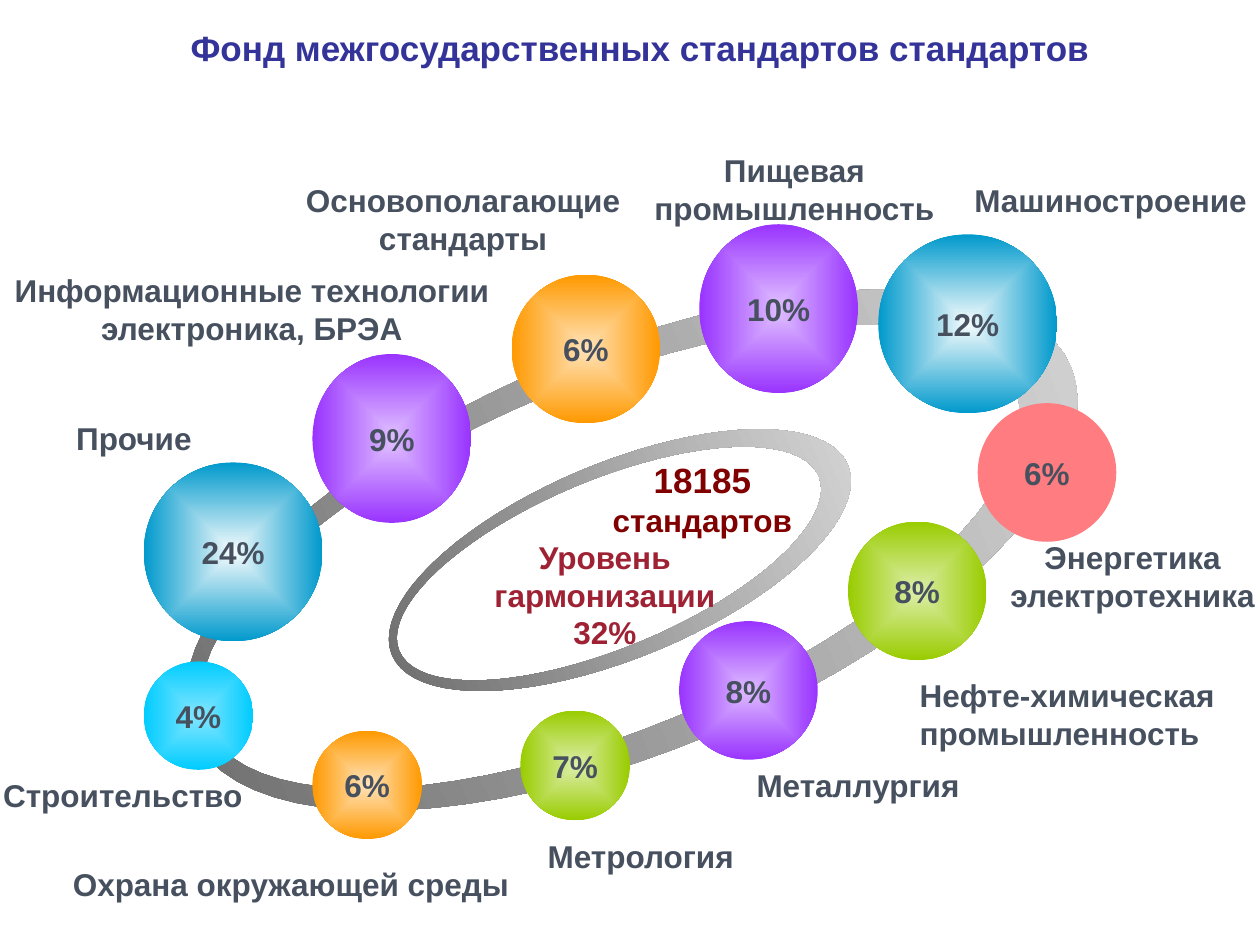
from dataclasses import dataclass
from math import cos, pi, sin
from typing import NamedTuple

from lxml.etree import SubElement
from pptx import Presentation
from pptx.dml.color import RGBColor
from pptx.enum.shapes import MSO_SHAPE
from pptx.enum.text import MSO_ANCHOR, MSO_AUTO_SIZE, PP_ALIGN
from pptx.oxml.ns import qn
from pptx.util import Inches, Pt


class Gradient(NamedTuple):
    start: str
    end: str


@dataclass(frozen=True)
class Theme:
    font: str = "Arial"
    large: int = 20
    normal: int = 18
    title: str = "333399"
    text: str = "46505E"
    total: str = "800000"
    level: str = "9E2234"
    coral: str = "FF7C80"
    ring: Gradient = Gradient("656565", "DDDDDD")
    green: Gradient = Gradient("DDEEAA", "99CC00")
    violet: Gradient = Gradient("DDBBFF", "9933FF")
    orange: Gradient = Gradient("FFE3B9", "FF9900")
    cyan: Gradient = Gradient("83E6FF", "00CCFF")
    blue: Gradient = Gradient("F7FCFD", "0099CC")


THEME = Theme()


class Box(NamedTuple):
    left: float
    top: float
    width: float
    height: float

    def lengths(self):
        return [Inches(value) for value in self]


class Span(NamedTuple):
    text: str
    size: int = THEME.normal
    color: str = THEME.text


@dataclass(frozen=True)
class Bubble:
    share: str
    box: Box
    fill: Gradient | str


@dataclass(frozen=True)
class Label:
    """Text of paragraphs, each a list of lines parted by line breaks."""
    paragraphs: list[list[Span]]
    box: Box
    align: PP_ALIGN | None = PP_ALIGN.CENTER
    wrap: bool = False


RINGS = [Box(1.23, 2.77, 7.56, 3.19), Box(2.96, 3.67, 3.92, 1.55)]
RING_TILT = -22.6
RING_STEPS = 80

BUBBLES = [
    Bubble("8%", Box(6.73, 4.14, 1.1, 1.1), THEME.green),
    Bubble("8%", Box(5.39, 4.93, 1.1, 1.1), THEME.violet),
    Bubble("6%", Box(2.48, 5.8, 0.87, 0.86), THEME.orange),
    Bubble("4%", Box(1.14, 5.25, 0.87, 0.86), THEME.cyan),
    Bubble("6%", Box(4.06, 2.18, 1.18, 1.18), THEME.orange),
    Bubble("9%", Box(2.48, 2.81, 1.26, 1.34), THEME.violet),
    Bubble("24%", Box(1.14, 3.67, 1.42, 1.42), THEME.blue),
    Bubble("7%", Box(4.13, 5.64, 0.87, 0.87), THEME.green),
    Bubble("6%", Box(7.76, 3.2, 1.1, 1.1), THEME.coral),
    Bubble("10%", Box(5.55, 1.78, 1.26, 1.34), THEME.violet),
    Bubble("12%", Box(6.97, 1.86, 1.42, 1.42), THEME.blue),
]

LABELS = [
    Label([[Span("Нефте-химическая"), Span("промышленность")]],
          Box(7.2, 5.32, 2.55, 0.7), align=None),
    Label([[Span("Металлургия")]], Box(5.9, 6.03, 1.82, 0.4)),
    Label([[Span("Прочие")]], Box(0.49, 3.28, 1.13, 0.4), PP_ALIGN.RIGHT),
    Label([[Span("Строительство")]], Box(-0.08, 6.11, 2.11, 0.4)),
    Label([[Span("Метрология")]], Box(4.24, 6.59, 1.69, 0.4)),
    Label([[Span("Машиностроение")]], Box(7.63, 1.39, 2.37, 0.4)),
    Label([[Span("Основополагающие"), Span("стандарты")]],
          Box(2.32, 1.39, 2.71, 0.7)),
    Label([[Span("Пищевая")], [Span("промышленность")]],
          Box(4.69, 1.15, 3.23, 0.71), wrap=True),
    Label([[Span("18185", THEME.large, THEME.total),
            Span("стандартов", color=THEME.total)]],
          Box(4.76, 3.59, 1.63, 0.73)),
    Label([[Span("Уровень гармонизации 32%", color=THEME.level)]],
          Box(3.74, 4.22, 2.12, 1), wrap=True),
    Label([[Span("Энергетика")], [Span("электротехника")]],
          Box(7.91, 4.22, 2.16, 0.7)),
    Label([[Span("Охрана окружающей среды")]], Box(0.48, 6.82, 3.66, 0.4)),
    Label([[Span("Информационные технологии")], [Span("электроника, БРЭА")]],
          Box(0, 2.1, 4, 0.7)),
]


def write(frame, paragraphs: list[list[Span]], align: PP_ALIGN | None) -> None:
    for number, lines in enumerate(paragraphs):
        paragraph = frame.add_paragraph() if number else frame.paragraphs[0]
        paragraph.alignment = align
        for position, span in enumerate(lines):
            if position:
                paragraph.add_line_break()
            run = paragraph.add_run()
            run.text = span.text
            run.font.name = THEME.font
            run.font.size = Pt(span.size)
            run.font.bold = True
            run.font.color.rgb = RGBColor.from_string(span.color)


def paint(shape, fill: Gradient | str, from_centre: bool = False) -> None:
    shape.shadow.inherit = False
    shape.line.fill.background()
    if isinstance(fill, str):
        shape.fill.solid()
        shape.fill.fore_color.rgb = RGBColor.from_string(fill)
        return
    shape.fill.gradient()
    shape.fill.gradient_angle = 0
    for stop, color in zip(shape.fill.gradient_stops, fill):
        stop.color.rgb = RGBColor.from_string(color)
    if from_centre:
        gradient = shape._element.spPr.find(qn("a:gradFill"))
        gradient.remove(gradient.find(qn("a:lin")))
        path = SubElement(gradient, qn("a:path"), path="shape")
        SubElement(path, qn("a:fillToRect"),
                   {side: "50000" for side in "ltrb"})


def ellipse_points(x: float, y: float, rx: float, ry: float, direction: int):
    angles = (direction * 2 * pi * step / RING_STEPS for step in range(RING_STEPS))
    return [(Inches(x + rx * cos(a)), Inches(y + ry * sin(a))) for a in angles]


def draw_ring(shapes, box: Box) -> None:
    """Draw a tilted ellipse whose hole sits off centre, so the right is thicker."""
    rx, ry = box.width / 2, box.height / 2
    x, y = box.left + rx, box.top + ry
    outer = ellipse_points(x, y, rx, ry, -1)
    hole = ellipse_points(x - 0.046 * rx, y - 0.01 * ry, 0.92 * rx, 0.862 * ry, 1)
    builder = shapes.build_freeform(*outer[0])
    builder.add_line_segments(outer[1:])
    builder.move_to(*hole[0])
    builder.add_line_segments(hole[1:])
    ring = builder.convert_to_shape()
    ring.rotation = RING_TILT
    paint(ring, THEME.ring)


def draw_bubble(shapes, bubble: Bubble) -> None:
    circle = shapes.add_shape(MSO_SHAPE.OVAL, *bubble.box.lengths())
    paint(circle, bubble.fill, from_centre=True)
    frame = circle.text_frame
    frame.word_wrap = False
    frame.vertical_anchor = MSO_ANCHOR.MIDDLE
    write(frame, [[Span(bubble.share)]], PP_ALIGN.CENTER)


def draw_label(shapes, label: Label) -> None:
    frame = shapes.add_textbox(*label.box.lengths()).text_frame
    frame.word_wrap = label.wrap
    frame.auto_size = MSO_AUTO_SIZE.SHAPE_TO_FIT_TEXT
    write(frame, label.paragraphs, label.align)


def draw_title(title) -> None:
    title.left, title.top, title.width, title.height = Box(0.83, 0, 8.5, 0.76).lengths()
    title.text_frame.vertical_anchor = MSO_ANCHOR.MIDDLE
    heading = Span("Фонд межгосударственных стандартов стандартов",
                   THEME.large, THEME.title)
    write(title.text_frame, [[heading]], PP_ALIGN.CENTER)


def main() -> None:
    deck = Presentation()
    deck.slide_width, deck.slide_height = Inches(10), Inches(7.5)
    shapes = deck.slides.add_slide(deck.slide_layouts.get_by_name("Title Only")).shapes
    draw_title(shapes.title)
    for ring in RINGS:
        draw_ring(shapes, ring)
    for bubble in BUBBLES:
        draw_bubble(shapes, bubble)
    for label in LABELS:
        draw_label(shapes, label)
    deck.save("out.pptx")


if __name__ == "__main__":
    main()
